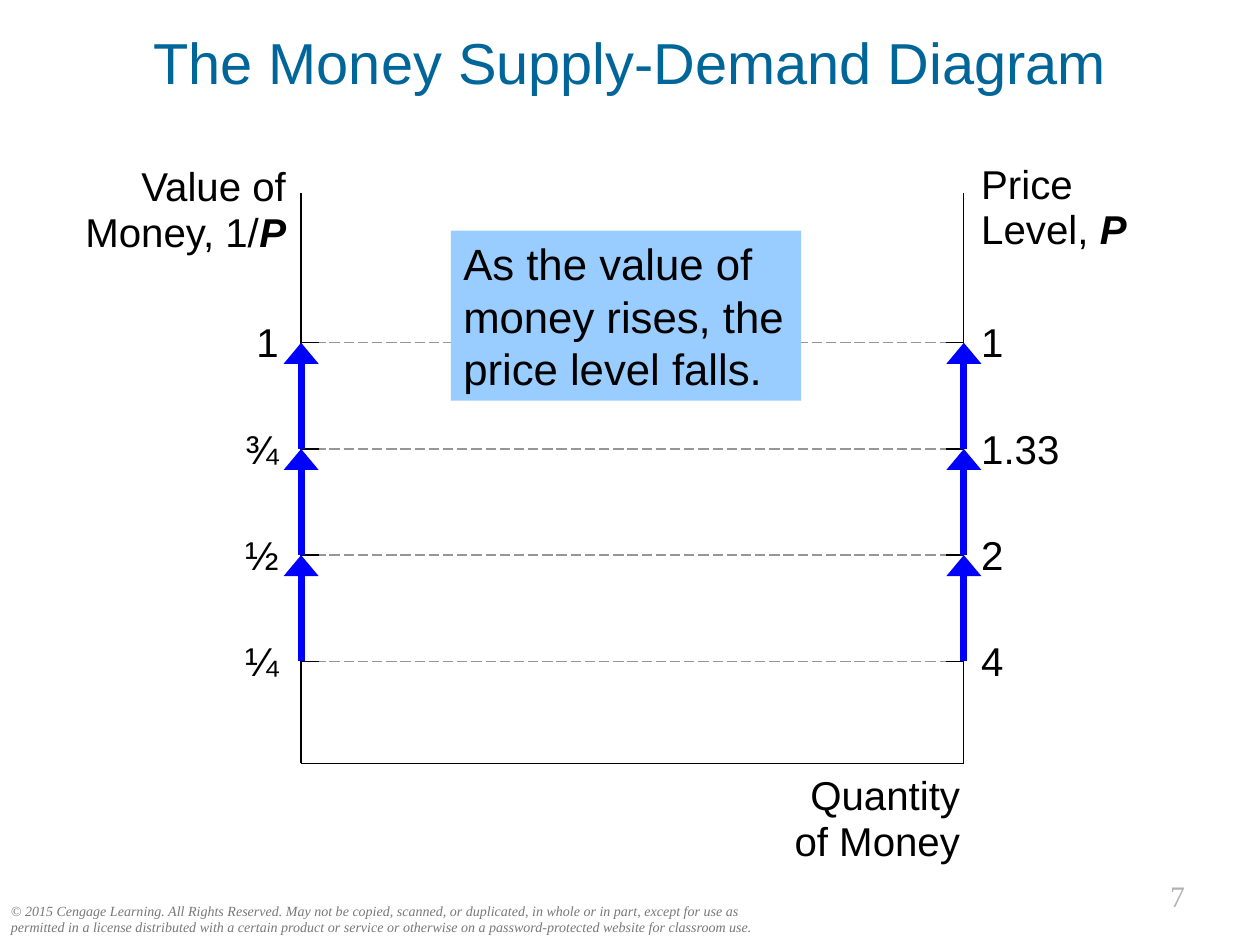
from lxml import etree
from pptx import Presentation
from pptx import util as u
from pptx.dml.color import RGBColor
from pptx.enum import dml, shapes, text
from pptx.oxml.ns import qn

LEFT_AXIS, RIGHT_AXIS = 6.07, 19.43
AXIS_TOP, AXIS_BOTTOM = 3.89, 15.39
TICK = 0.36
LEVELS = [round(6.91 + 2.14 * step, 2) for step in range(4)]
MONEY_VALUES = ["1", "¾", "½", "¼"]
PRICE_LEVELS = ["1", "1.33", "2", "4"]
COPYRIGHT = (
    "© 2015 Cengage Learning. All Rights Reserved. May not be copied, scanned, or "
    "duplicated, in whole or in part, except for use as permitted in a license "
    "distributed with a certain product or service or otherwise on a "
    "password-protected website for classroom use."
)


def color(value):
    """Turn a hex string into a colour."""
    return RGBColor.from_string(value)


def write(shape, content, size, ink="000000", font="Arial",
          align=text.PP_ALIGN.LEFT, spacing=None):
    """Put one formatted paragraph into a shape and return it."""
    frame = shape.text_frame
    frame.word_wrap = True
    frame.text = content
    paragraph = frame.paragraphs[0]
    paragraph.alignment = align
    paragraph.line_spacing = spacing
    for run in paragraph.runs:
        style(run, size, ink, font)
    return paragraph


def style(run, size, ink, font):
    """Set the size, colour and typeface of a run."""
    run.font.size = u.Pt(size)
    run.font.color.rgb = color(ink)
    run.font.name = font


def add_text(slide, left, top, width, height, content, size, **options):
    """Add a text box and return its paragraph."""
    box = slide.shapes.add_textbox(u.Cm(left), u.Cm(top), u.Cm(width), u.Cm(height))
    return write(box, content, size, **options)


def add_symbol(paragraph, symbol):
    """Append a bold italic variable name to an axis title."""
    run = paragraph.add_run()
    run.text = symbol
    style(run, 23, "000000", "Arial")
    run.font.bold = run.font.italic = True


def add_line(slide, x1, y1, x2, y2, ink="000000", width=0.75):
    """Add a straight line without shadow."""
    line = slide.shapes.add_connector(
        shapes.MSO_CONNECTOR.STRAIGHT, u.Cm(x1), u.Cm(y1), u.Cm(x2), u.Cm(y2))
    line.line.color.rgb = color(ink)
    line.line.width = u.Pt(width)
    etree.SubElement(line._element.spPr, qn("a:effectLst"))
    return line


def add_arrow(slide, x, start, end):
    """Add a thick blue arrow along an axis."""
    arrow = add_line(slide, x, start, x, end, "0000FF", 4)
    etree.SubElement(arrow.line._get_or_add_ln(), qn("a:tailEnd"),
                     type="triangle", w="lg", len="med")


def add_title(slide):
    """Place and format the slide title."""
    title = slide.shapes.title
    title.left, title.top, title.width, title.height = (
        u.Cm(0), u.Cm(0.33), u.Cm(25.4), u.Cm(1.8))
    write(title, "The Money Supply-Demand Diagram", 33, ink="006699",
          align=text.PP_ALIGN.CENTER)
    title.text_frame.vertical_anchor = text.MSO_ANCHOR.MIDDLE


def add_axes(slide):
    """Draw the axes and their titles."""
    right = text.PP_ALIGN.RIGHT
    add_line(slide, LEFT_AXIS, AXIS_BOTTOM, RIGHT_AXIS, AXIS_BOTTOM)
    for x in (LEFT_AXIS, RIGHT_AXIS):
        add_line(slide, x, AXIS_BOTTOM, x, AXIS_TOP)
    add_symbol(add_text(slide, 0.99, 3.2, 5.03, 2.11, "Value of Money, 1/", 23,
                        align=right, spacing=0.95), "P")
    add_symbol(add_text(slide, 19.53, 3.15, 5.03, 2.11, "Price \vLevel, ", 23,
                        spacing=0.95), "P")
    add_text(slide, 15.19, 15.47, 4.42, 2.11, "Quantity of Money", 23,
             align=right, spacing=0.95)


def add_level(slide, y, money_value, price_level):
    """Draw one dashed level with its ticks and two labels."""
    guide = add_line(slide, LEFT_AXIS, y, RIGHT_AXIS, y, "969696")
    guide.line.dash_style = dml.MSO_LINE.LONG_DASH
    add_line(slide, LEFT_AXIS, y, LEFT_AXIS + TICK, y)
    add_line(slide, RIGHT_AXIS - TICK, y, RIGHT_AXIS, y)
    add_text(slide, 4.57, y - 0.63, 1.3, 1.22, money_value, 23,
             align=text.PP_ALIGN.RIGHT)
    add_text(slide, 19.53, y - 0.63, 2.72, 1.22, price_level, 23)


def add_callout(slide):
    """Add the blue box with the conclusion."""
    box = slide.shapes.add_shape(shapes.MSO_SHAPE.RECTANGLE, u.Cm(9.09), u.Cm(4.65),
                                 u.Cm(7.06), u.Cm(3.43))
    box.shadow.inherit = False
    box.fill.solid()
    box.fill.fore_color.rgb = color("99CCFF")
    box.line.fill.background()
    write(box, "As the value of money rises, the price level falls.", 25)
    box.text_frame.vertical_anchor = text.MSO_ANCHOR.TOP


def add_footer(slide):
    """Add the copyright line and the page number."""
    paragraph = add_text(slide, -0.03, 18.06, 15.7, 0.94, COPYRIGHT, 8,
                         ink="777777", font="Times New Roman")
    paragraph.runs[0].font.italic = True
    add_text(slide, 20.96, 17.58, 3.18, 0.99, "7", 17, ink="B2B2B2",
             font="Times New Roman", align=text.PP_ALIGN.RIGHT)


def main():
    """Build the slide and save it."""
    presentation = Presentation()
    presentation.slide_width, presentation.slide_height = u.Cm(25.4), u.Cm(19.05)
    slide = presentation.slides.add_slide(presentation.slide_layouts[5])
    add_footer(slide)
    add_title(slide)
    add_axes(slide)
    for level in zip(LEVELS, MONEY_VALUES, PRICE_LEVELS):
        add_level(slide, *level)
    add_callout(slide)
    for x in (LEFT_AXIS, RIGHT_AXIS):
        for end, start in reversed(list(zip(LEVELS, LEVELS[1:]))):
            add_arrow(slide, x, start, end)
    presentation.save("out.pptx")


if __name__ == "__main__":
    main()
